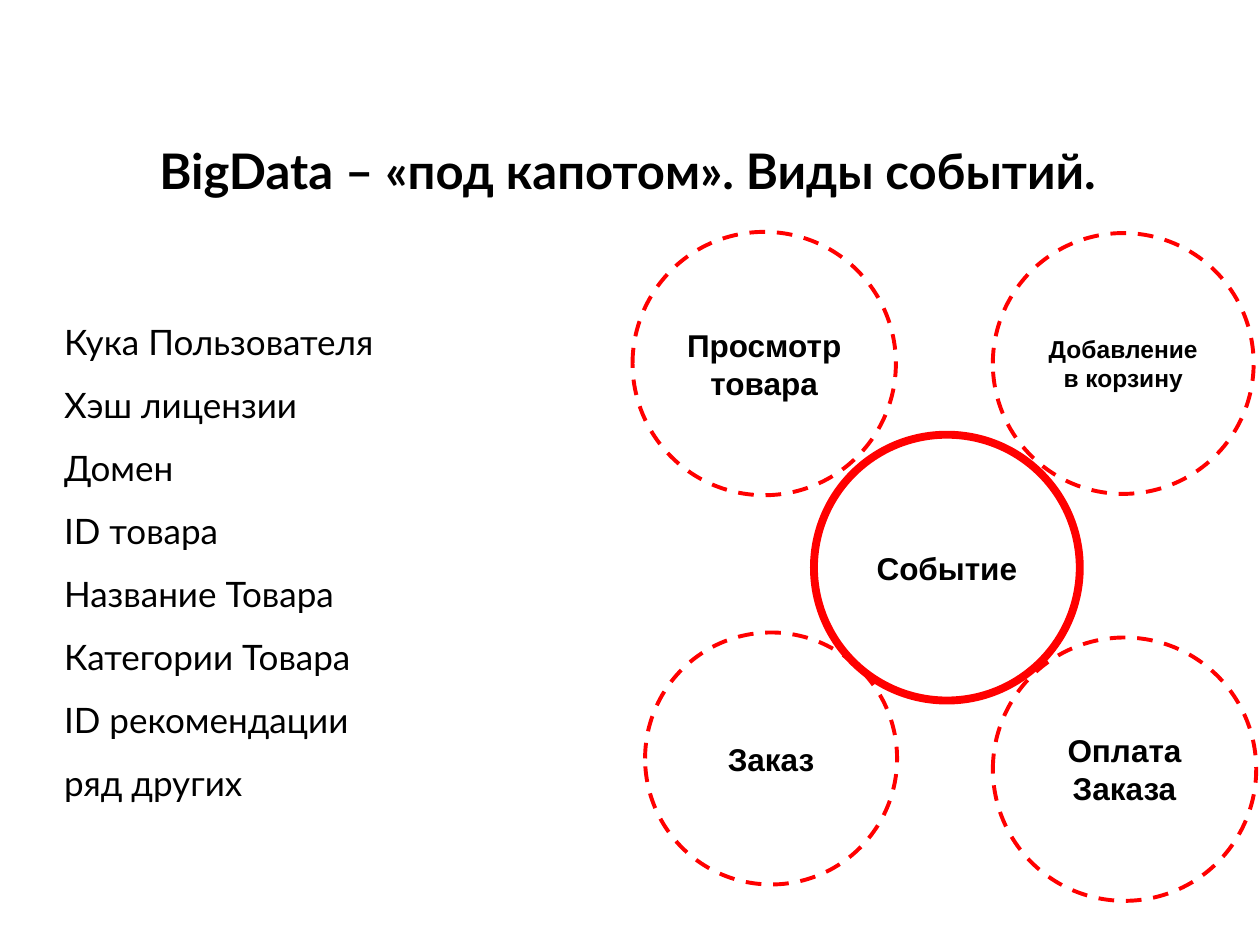
import pptx
import pptx.util
from pptx.dml.color import RGBColor
from pptx.enum.dml import MSO_LINE
from pptx.enum.shapes import MSO_SHAPE
from pptx.enum.text import MSO_ANCHOR, PP_ALIGN

Inches, Pt = pptx.util.Inches, pptx.util.Pt

COLORS = {"text": "000000", "ring": "FF0000"}
FIELDS = ["Кука Пользователя", "Хэш лицензии", "Домен", "ID товара",
          "Название Товара", "Категории Товара", "ID рекомендации", "ряд других"]

# Event circles relative to the diagram: text, left, top, diameter, text size
CENTER = ("Событие", 1.44, 1.61, 2.11, 18)
EVENTS = [
    ("Просмотр товара", 0, 0, 2.09, 18),
    ("Добавление\vв корзину", 2.86, 0.01, 2.07, 14),
    ("Заказ", 0.1, 3.18, 2, 18),
    ("Оплата Заказа", 2.86, 3.22, 2.09, 18),
]


def style(p, font, size, bold=False):
    p.font.name = font
    p.font.size = Pt(size)
    p.font.bold = bold
    p.font.color.rgb = RGBColor.from_string(COLORS["text"])


def add_title(slide, left, top, width, height):
    sp = slide.shapes.add_textbox(Inches(left), Inches(top), Inches(width), Inches(height))
    tf = sp.text_frame
    tf.word_wrap = True
    tf.vertical_anchor = MSO_ANCHOR.MIDDLE
    p = tf.paragraphs[0]
    p.text = "BigData – «под капотом». Виды событий."
    p.alignment = PP_ALIGN.CENTER
    style(p, "Lato", 28, bold=True)


def add_fields(slide, left, top, width, height):
    sp = slide.shapes.add_textbox(Inches(left), Inches(top), Inches(width), Inches(height))
    tf = sp.text_frame
    tf.word_wrap = True
    tf.text = "\n".join(FIELDS)
    for p in tf.paragraphs:
        p.line_spacing = 1.5
        style(p, "Lato", 20)


def add_circle(slide, left, top, diameter, text, size, line_width, dash=None):
    sp = slide.shapes.add_shape(MSO_SHAPE.OVAL, Inches(left), Inches(top),
                                Inches(diameter), Inches(diameter))
    sp.shadow.inherit = False
    sp.fill.background()
    sp.line.color.rgb = RGBColor.from_string(COLORS["ring"])
    sp.line.width = Pt(line_width)
    if dash:
        sp.line.dash_style = dash
    tf = sp.text_frame
    tf.word_wrap = True
    tf.vertical_anchor = MSO_ANCHOR.MIDDLE
    p = tf.paragraphs[0]
    p.text = text
    p.alignment = PP_ALIGN.CENTER
    style(p, "Arial", size, bold=True)


def add_diagram(slide, left, top):
    # Solid ring in the middle, dashed rings around it
    text, x, y, diameter, size = CENTER
    add_circle(slide, left + x, top + y, diameter, text, size, 4.5)
    for text, x, y, diameter, size in EVENTS:
        add_circle(slide, left + x, top + y, diameter, text, size, 2.25, MSO_LINE.DASH)


def main():
    prs = pptx.Presentation()
    prs.slide_width, prs.slide_height = Inches(10), Inches(7.5)
    slide = prs.slides.add_slide(prs.slide_layouts[6])
    add_title(slide, 0, 0.76, 9.96, 1.18)
    add_fields(slide, 0.41, 2.33, 2.85, 4.14)
    add_diagram(slide, 5.02, 1.84)
    prs.save("out.pptx")


if __name__ == "__main__":
    main()
